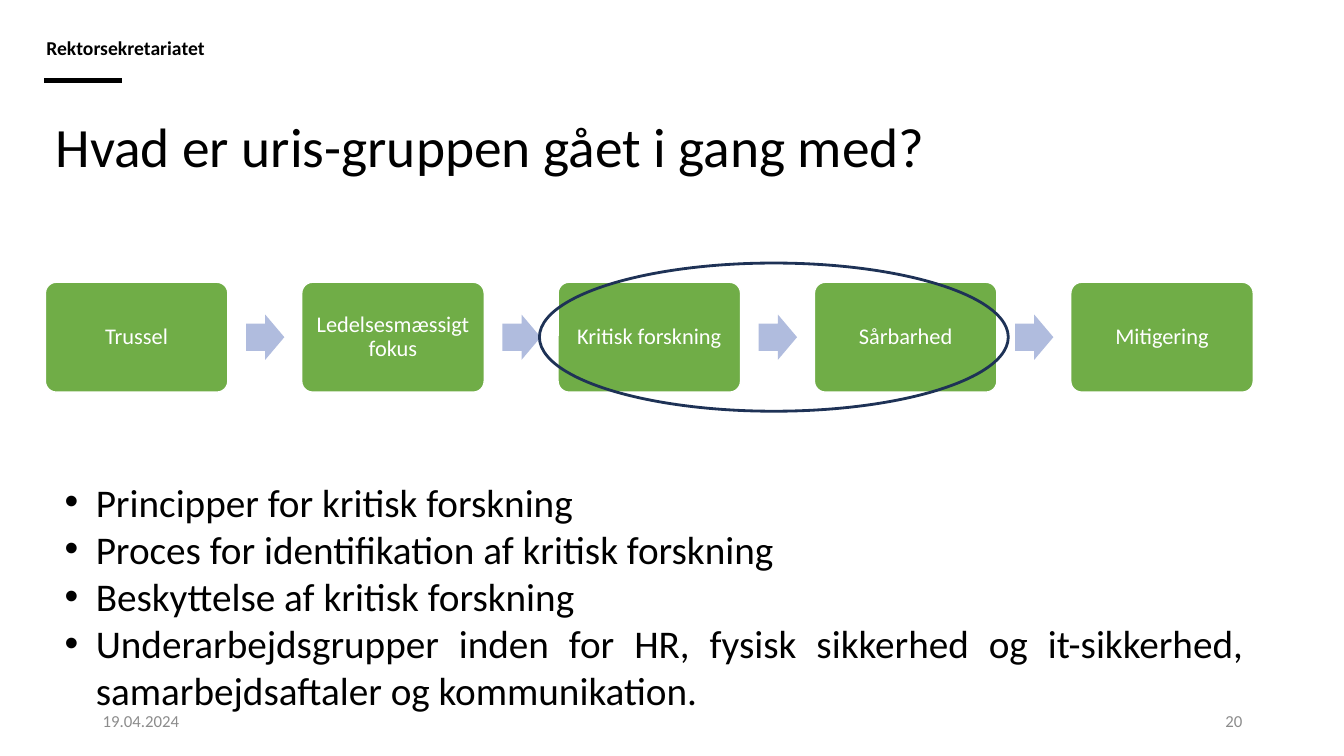
from lxml import etree
from pptx import Presentation
from pptx.dml.color import RGBColor
from pptx.enum import shapes, text
from pptx.oxml import ns
from pptx.util import Inches, Pt

BLACK = RGBColor(0x00, 0x00, 0x00)
WHITE = RGBColor(0xFF, 0xFF, 0xFF)
GREEN = RGBColor(0x70, 0xAD, 0x47)
LAVENDER = RGBColor(0xB0, 0xBC, 0xDE)
NAVY = RGBColor(0x1E, 0x32, 0x56)
GREY = RGBColor(0x8C, 0x8C, 0x8C)
FONT = "Calibri"

STEPS = ["Trussel", "Ledelsesmæssigt fokus", "Kritisk forskning", "Sårbarhed", "Mitigering"]
BULLETS = [
    "Principper for kritisk forskning",
    "Proces for identifikation af kritisk forskning",
    "Beskyttelse af kritisk forskning",
    "Underarbejdsgrupper inden for HR, fysisk sikkerhed og it-sikkerhed, "
    "samarbejdsaftaler og kommunikation.",
]


def style_paragraph(paragraph, size, color, alignment=text.PP_ALIGN.LEFT, spacing=1.0, bold=False):
    """Set the font, alignment and spacing of a paragraph."""
    paragraph.alignment = alignment
    paragraph.line_spacing = spacing
    paragraph.space_before = Pt(0)
    font = paragraph.font
    font.name, font.size, font.bold = FONT, Pt(size), bold
    font.color.rgb = color


def set_frame(frame, anchor, margins=(0.1, 0.05, 0.1, 0.05)):
    """Wrap a text frame and set its anchor and margins in inches."""
    frame.word_wrap = True
    frame.auto_size = text.MSO_AUTO_SIZE.NONE
    frame.vertical_anchor = anchor
    frame.margin_left, frame.margin_top, frame.margin_right, frame.margin_bottom = map(Inches, margins)


def place(shape, left, top, width, height):
    """Move a shape to a box given in inches."""
    shape.left, shape.top = Inches(left), Inches(top)
    shape.width, shape.height = Inches(width), Inches(height)


def add_label(slide, left, top, width, height, label, **style):
    """Add a text box with one paragraph and return its frame."""
    box = slide.shapes.add_textbox(Inches(left), Inches(top), Inches(width), Inches(height))
    frame = box.text_frame
    set_frame(frame, text.MSO_ANCHOR.MIDDLE)
    frame.text = label
    style_paragraph(frame.paragraphs[0], **style)
    return frame


def add_flat_shape(slide, kind, left, top, width, height, fill=None, line=None, line_width=1):
    """Add a preset shape without shadow, with optional fill and line."""
    shape = slide.shapes.add_shape(kind, Inches(left), Inches(top), Inches(width), Inches(height))
    shape.shadow.inherit = False
    if fill is None:
        shape.fill.background()
    else:
        shape.fill.solid()
        shape.fill.fore_color.rgb = fill
    if line is None:
        shape.line.fill.background()
    else:
        shape.line.color.rgb = line
        shape.line.width = Pt(line_width)
    return shape


def add_header(slide, left, top, width, height):
    """Add the department name with the short rule below it."""
    frame = add_label(slide, left, top, width, height, "Rektorsekretariatet",
                      size=14, color=BLACK, spacing=0.9, bold=True)
    set_frame(frame, text.MSO_ANCHOR.BOTTOM, (0.01, 0, 0, 0.1))
    rule_top = Inches(top + height + 0.11)
    rule = slide.shapes.add_connector(shapes.MSO_CONNECTOR.STRAIGHT, Inches(left - 0.01), rule_top,
                                      Inches(left + 0.76), rule_top)
    rule.line.color.rgb = BLACK
    rule.line.width = Pt(3)
    etree.SubElement(rule._element.spPr, ns.qn("a:effectLst"))


def add_title(slide, left, top, width, height):
    """Fill and place the title placeholder."""
    title = slide.shapes.title
    place(title, left, top, width, height)
    title.text_frame.text = "Hvad er uris-gruppen gået i gang med?"
    set_frame(title.text_frame, text.MSO_ANCHOR.MIDDLE)
    style_paragraph(title.text_frame.paragraphs[0], 39.6, BLACK, spacing=0.9)


def add_process(slide, left, top, width, height):
    """Add the row of steps with an arrow between neighbours."""
    step_width, arrow_width, arrow_height = 1.81, 0.38, 0.45
    pitch = (width - step_width) / (len(STEPS) - 1)
    for index, label in enumerate(STEPS):
        step_left = left + index * pitch
        step = add_flat_shape(slide, shapes.MSO_SHAPE.ROUNDED_RECTANGLE, step_left, top,
                              step_width, height, GREEN, WHITE)
        step.adjustments[0] = 0.1
        set_frame(step.text_frame, text.MSO_ANCHOR.MIDDLE, (0.1,) * 4)
        step.text_frame.text = label
        style_paragraph(step.text_frame.paragraphs[0], 16, WHITE, text.PP_ALIGN.CENTER, 0.9)
        if index < len(STEPS) - 1:
            arrow = add_flat_shape(slide, shapes.MSO_SHAPE.RIGHT_ARROW, step_left + step_width + 0.18,
                                   top + (height - arrow_height) / 2, arrow_width, arrow_height, LAVENDER)
            arrow.adjustments[0] = 0.6
            arrow.adjustments[1] = 0.5


def add_footer(slide, left, top, width, height):
    """Add the date at the left and the page number at the right."""
    label_width = 3
    add_label(slide, left, top, label_width, height, "19.04.2024", size=12, color=GREY)
    add_label(slide, left + width - label_width, top, label_width, height, "20",
              size=12, color=GREY, alignment=text.PP_ALIGN.RIGHT)


def add_bullets(slide, left, top, width, height):
    """Fill and place the body placeholder with the bullet list."""
    body = slide.placeholders[1]
    place(body, left, top, width, height)
    frame = body.text_frame
    set_frame(frame, text.MSO_ANCHOR.TOP)
    frame.text = "\n".join(BULLETS)
    for paragraph in frame.paragraphs:
        properties = paragraph._p.get_or_add_pPr()
        properties.set("marL", str(Inches(0.31)))
        properties.set("indent", str(-Inches(0.31)))
        etree.SubElement(properties, ns.qn("a:buFont")).set("typeface", "Arial")
        etree.SubElement(properties, ns.qn("a:buChar")).set("char", "•")
        style_paragraph(paragraph, 28, BLACK, text.PP_ALIGN.JUSTIFY)


def main():
    """Build the slide and save it."""
    presentation = Presentation()
    presentation.slide_width, presentation.slide_height = Inches(13.33), Inches(7.5)
    slide = presentation.slides.add_slide(presentation.slide_layouts[1])
    add_header(slide, 0.45, 0.38, 5.54, 0.31)
    add_title(slide, 0.45, 1.12, 11.99, 0.73)
    add_process(slide, 0.45, 2.8, 11.98, 1.09)
    add_footer(slide, 0.92, 6.95, 11.5, 0.4)
    add_flat_shape(slide, shapes.MSO_SHAPE.OVAL, 5.35, 2.61, 4.65, 1.47, line=NAVY, line_width=2)
    add_bullets(slide, 0.54, 4.69, 11.89, 2.46)
    presentation.save("out.pptx")


if __name__ == "__main__":
    main()
